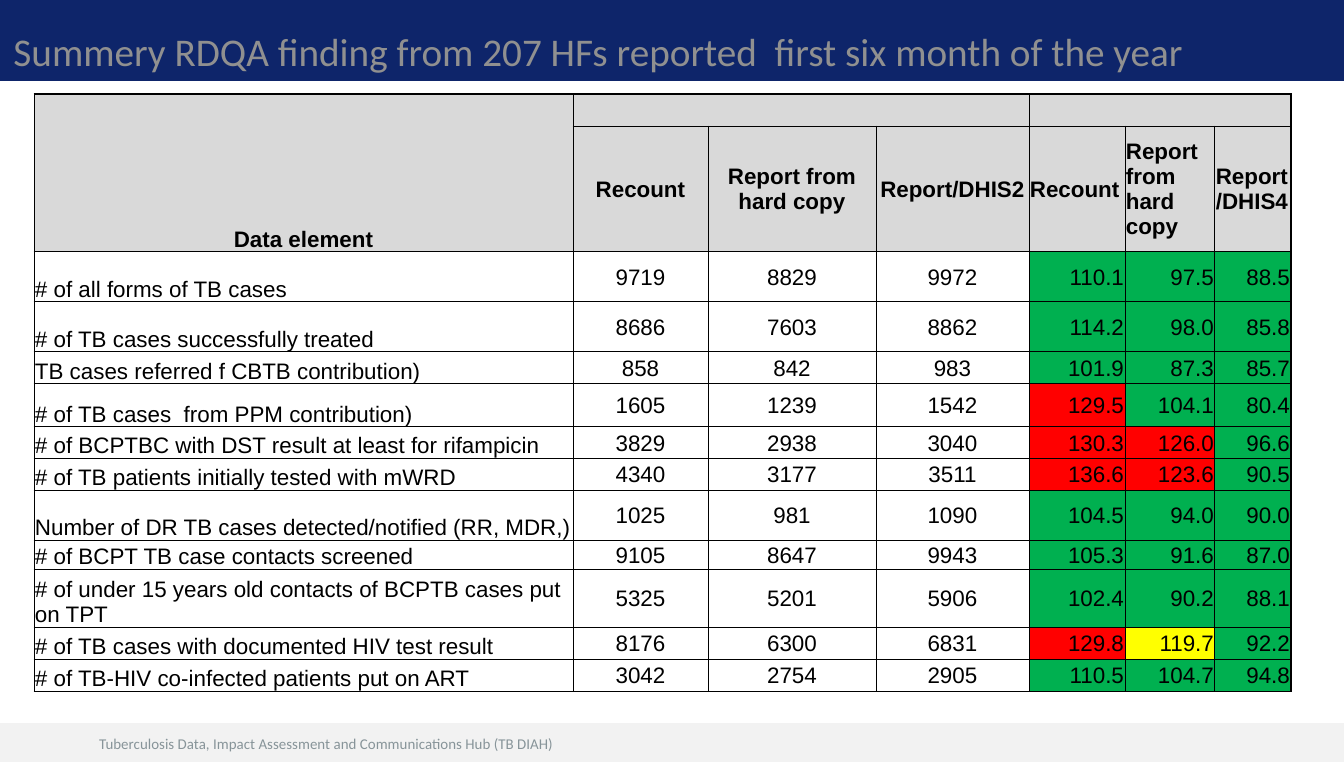
from lxml.etree import SubElement
from pptx import Presentation
from pptx.dml.color import RGBColor
from pptx.enum.shapes import MSO_SHAPE as Shape
from pptx.enum.text import MSO_ANCHOR as Anchor, MSO_AUTO_SIZE as AutoSize, PP_ALIGN as Align
from pptx.oxml.ns import qn
from pptx.util import Emu, Pt

PX = 914400 / 134.4
NAVY = RGBColor(0x0E, 0x25, 0x6A)
TITLE_GREY = RGBColor(0x90, 0x90, 0x90)
FOOTER_GREY = RGBColor(0x87, 0x94, 0x99)
STRIP_GREY = RGBColor(0xF2, 0xF2, 0xF2)
HEADER_GREY = RGBColor(0xD9, 0xD9, 0xD9)
BLACK = RGBColor(0, 0, 0)
GREEN = RGBColor(0x00, 0xB0, 0x50)
YELLOW = RGBColor(0xFF, 0xFF, 0x00)
RED = RGBColor(0xFF, 0x00, 0x00)

COLUMN_WIDTHS = [539, 135, 168, 153, 96, 90, 76]
ROW_HEIGHTS = [32, 126, 50, 50, 32, 43, 32, 32, 50, 29, 58, 32, 32]
FIRST_RATIO = 4
HEADERS = [
    ["Data element", "", "", "", "", "", ""],
    ["", "Recount", "Report from hard copy", "Report/DHIS2",
     "Recount", "Report from hard copy", "Report/DHIS4"],
]
FINDINGS = [
    ("# of all forms of TB cases", 9719, 8829, 9972, 110.1, 97.5, 88.5),
    ("# of TB cases successfully treated", 8686, 7603, 8862, 114.2, 98.0, 85.8),
    ("TB cases referred f CBTB contribution)", 858, 842, 983, 101.9, 87.3, 85.7),
    ("# of TB cases  from PPM contribution)", 1605, 1239, 1542, 129.5, 104.1, 80.4),
    ("# of BCPTBC with DST result at least for rifampicin", 3829, 2938, 3040, 130.3, 126.0, 96.6),
    ("# of TB patients initially tested with mWRD", 4340, 3177, 3511, 136.6, 123.6, 90.5),
    ("Number of DR TB cases detected/notified (RR, MDR,)", 1025, 981, 1090, 104.5, 94.0, 90.0),
    ("# of BCPT TB case contacts screened", 9105, 8647, 9943, 105.3, 91.6, 87.0),
    ("# of under 15 years old contacts of BCPTB cases put on TPT",
     5325, 5201, 5906, 102.4, 90.2, 88.1),
    ("# of TB cases with documented HIV test result", 8176, 6300, 6831, 129.8, 119.7, 92.2),
    ("# of TB-HIV co-infected patients put on ART", 3042, 2754, 2905, 110.5, 104.7, 94.8),
]


def px(length):
    return Emu(round(length * PX))


def box(left, top, width, height):
    return px(left), px(top), px(width), px(height)


def add_run(paragraph, text, font_name, size, color, bold=False):
    run = paragraph.add_run()
    run.text = text
    run.font.name = font_name
    run.font.size = Pt(size)
    run.font.color.rgb = color
    run.font.bold = bold


def add_title(slide, text):
    title = slide.shapes.title
    title.left, title.top, title.width, title.height = box(0, 0, 1344, 81)
    title.fill.solid()
    title.fill.fore_color.rgb = NAVY
    frame = title.text_frame
    frame.auto_size = AutoSize.NONE
    frame.vertical_anchor = Anchor.BOTTOM
    frame.paragraphs[0].alignment = Align.LEFT
    add_run(frame.paragraphs[0], text, "Calibri", 21, TITLE_GREY)


def add_footer(slide, text):
    strip = slide.shapes.add_shape(Shape.RECTANGLE, *box(0, 723, 1344, 39))
    strip.shadow.inherit = False
    strip.fill.solid()
    strip.fill.fore_color.rgb = STRIP_GREY
    strip.line.fill.background()
    frame = slide.shapes.add_textbox(*box(86, 728, 672, 32)).text_frame
    frame.word_wrap = True
    add_run(frame.paragraphs[0], text, "Calibri", 8, FOOTER_GREY)


def set_borders(cell, **widths):
    """Draw black cell edges; widths are points keyed by L, R, T and B."""
    properties = cell._tc.get_or_add_tcPr()
    for side, width in widths.items():
        edge = SubElement(properties, qn(f"a:ln{side}"), w=str(Pt(width)))
        fill = SubElement(edge, qn("a:solidFill"))
        SubElement(fill, qn("a:srgbClr"), val=str(BLACK))


def ratio_color(ratio):
    if ratio > 120:
        return RED
    return YELLOW if ratio > 115 else GREEN


def fill_cell(cell, text, alignment, anchor, color=None, bold=False):
    cell.margin_left = cell.margin_right = cell.margin_top = px(1)
    cell.margin_bottom = 0
    cell.vertical_anchor = anchor
    if color is None:
        cell.fill.background()
    else:
        cell.fill.solid()
        cell.fill.fore_color.rgb = color
    paragraph = cell.text_frame.paragraphs[0]
    paragraph.alignment = alignment
    if text:
        add_run(paragraph, text, "Arial", 12, BLACK, bold)
    else:
        # Keeps an empty cell from growing to the default text size
        SubElement(paragraph._p, qn("a:endParaRPr"), sz="1200")


def add_findings_table(slide):
    frame = slide.shapes.add_table(
        len(ROW_HEIGHTS), len(COLUMN_WIDTHS),
        *box(34, 94, sum(COLUMN_WIDTHS), sum(ROW_HEIGHTS)))
    table = frame.table
    table.first_row = table.horz_banding = False
    for column, width in zip(table.columns, COLUMN_WIDTHS):
        column.width = px(width)
    for row, height in zip(table.rows, ROW_HEIGHTS):
        row.height = px(height)

    last = len(COLUMN_WIDTHS) - 1
    for r, values in enumerate(HEADERS + FINDINGS):
        for c, value in enumerate(values):
            cell = table.cell(r, c)
            at_right = c == last or (r == 0 and c >= FIRST_RATIO)
            set_borders(cell, L=0.5, R=1 if at_right else 0.5,
                        T=1 if r == 0 else 0.5, B=0.5)
            anchor = Anchor.BOTTOM if c == 0 else Anchor.MIDDLE
            if r < len(HEADERS):
                alignment = Align.CENTER if c < FIRST_RATIO else Align.LEFT
                fill_cell(cell, value, alignment, anchor, HEADER_GREY, bold=True)
            elif c >= FIRST_RATIO:
                fill_cell(cell, f"{value:.1f}", Align.RIGHT, anchor, ratio_color(value))
            else:
                alignment = Align.LEFT if c == 0 else Align.CENTER
                fill_cell(cell, str(value), alignment, anchor)

    table.cell(0, 0).merge(table.cell(1, 0))
    table.cell(0, 1).merge(table.cell(0, FIRST_RATIO - 1))
    table.cell(0, FIRST_RATIO).merge(table.cell(0, last))


def main():
    deck = Presentation()
    deck.slide_width, deck.slide_height = px(1344), px(762)
    slide = deck.slides.add_slide(deck.slide_layouts[5])
    add_footer(slide, "Tuberculosis Data, Impact Assessment and Communications Hub (TB DIAH)")
    add_title(slide, "Summery RDQA finding from 207 HFs reported  first six month of the year")
    add_findings_table(slide)
    deck.save("out.pptx")


if __name__ == "__main__":
    main()
